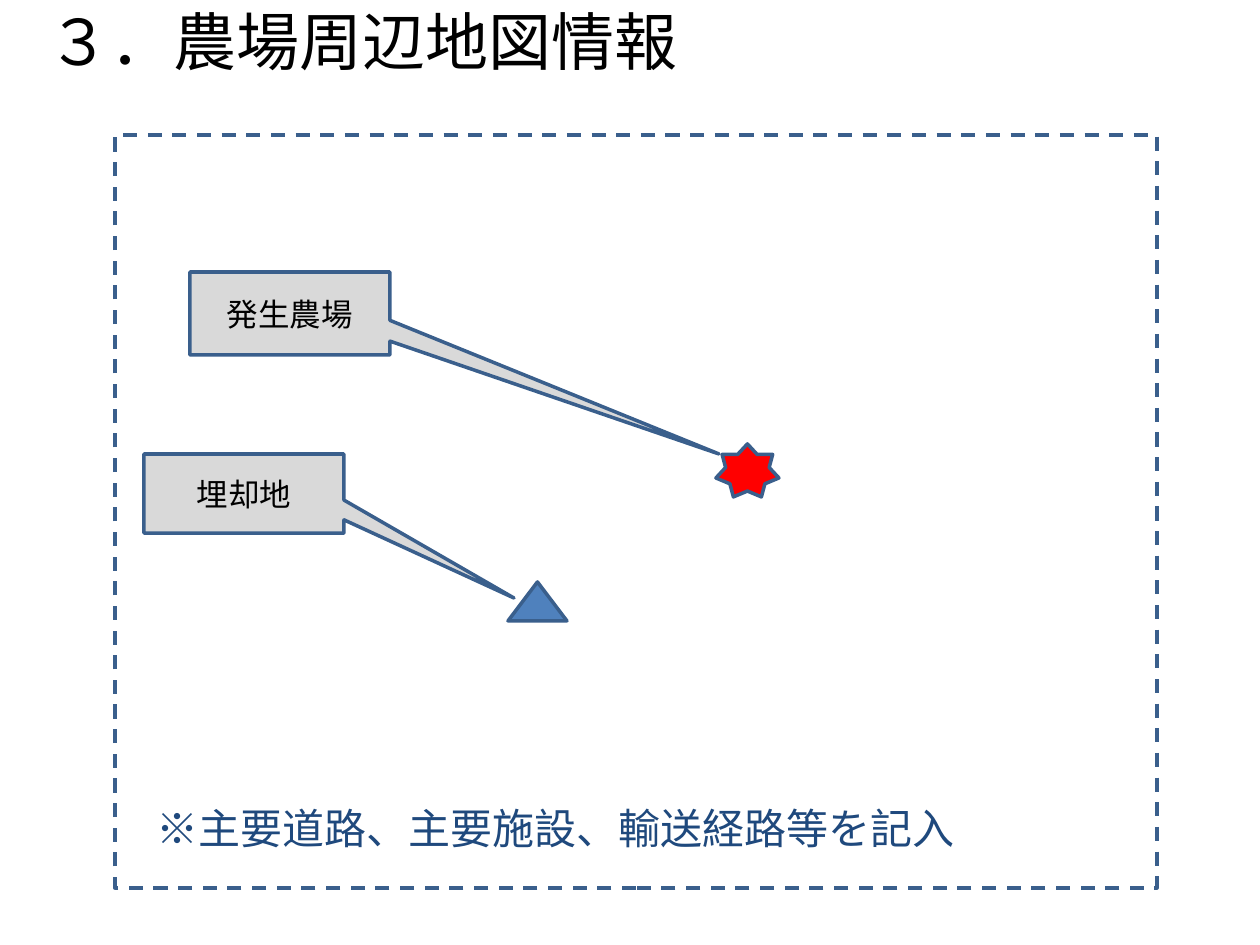
from pptx import Presentation
from pptx.dml.color import RGBColor
from pptx.enum.dml import MSO_LINE
from pptx.enum.shapes import MSO_SHAPE as SHAPE
from pptx.enum.text import MSO_ANCHOR as ANCHOR, PP_ALIGN as ALIGN
from pptx.util import Emu, Pt

PX = 914400 // 126  # one px in EMU
COLORS = {"outline": "3A5F8C", "farm": "FF0000", "burial": "4F81BD",
          "label": "D9D9D9", "black": "000000", "note": "1F497D"}

# Content: boxes are left, top, width, height in px
MAP_FRAME = (115, 135, 1042, 753)
HEADINGS = [
    ("３．農場周辺地図情報", (35, -4, 1134, 107), 36, "black"),
    ("※主要道路、主要施設、輸送経路等を記入", (144, 796, 1134, 79), 24, "note"),
]
MARKERS = [
    (SHAPE.STAR_7_POINT, (716, 444, 63, 53), "farm"),
    (SHAPE.ISOSCELES_TRIANGLE, (508, 582, 59, 39), "burial"),
]
# Each callout has the point its tail reaches
CALLOUTS = [
    ("発生農場", (190, 272, 200, 83), (719, 454)),
    ("埋却地", (144, 454, 200, 79), (514, 598)),
]


def rgb(name):
    return RGBColor.from_string(COLORS[name])


def place(box):
    return [Emu(length * PX) for length in box]


def write(shape, text, *, size, color, font="Arial",
          align=ALIGN.LEFT, anchor=ANCHOR.TOP):
    frame = shape.text_frame
    frame.word_wrap = True
    frame.vertical_anchor = anchor
    line = frame.paragraphs[0]
    line.alignment = align
    run = line.add_run()
    run.text = text
    run.font.name, run.font.size = font, Pt(size)
    run.font.color.rgb = rgb(color)


def add_outlined(kind, box, fill=None):
    shape = slide.shapes.add_shape(kind, *place(box))
    shape.shadow.inherit = False
    if fill:
        shape.fill.solid()
        shape.fill.fore_color.rgb = rgb(fill)
    else:
        shape.fill.background()
    shape.line.color.rgb = rgb("outline")
    shape.line.width = Pt(2)
    return shape


deck = Presentation()
deck.slide_width, deck.slide_height = place((1260, 945))
slide = deck.slides.add_slide(deck.slide_layouts[6])

# Map area
map_area = add_outlined(SHAPE.RECTANGLE, MAP_FRAME)
map_area.line.dash_style = MSO_LINE.DASH

# Title and note
for text, box, size, color in HEADINGS:
    write(slide.shapes.add_textbox(*place(box)), text, size=size, color=color)

# Sites on the map
for kind, box, fill in MARKERS:
    add_outlined(kind, box, fill)

# Site labels, with tail offsets measured from the label's centre
for text, box, (tip_x, tip_y) in CALLOUTS:
    left, top, width, height = box
    callout = add_outlined(SHAPE.RECTANGULAR_CALLOUT, box, "label")
    callout.adjustments[0] = (tip_x - left) / width - 0.5
    callout.adjustments[1] = (tip_y - top) / height - 0.5
    write(callout, text, size=18, color="black", font="Calibri",
          align=ALIGN.CENTER, anchor=ANCHOR.MIDDLE)

deck.save("out.pptx")
